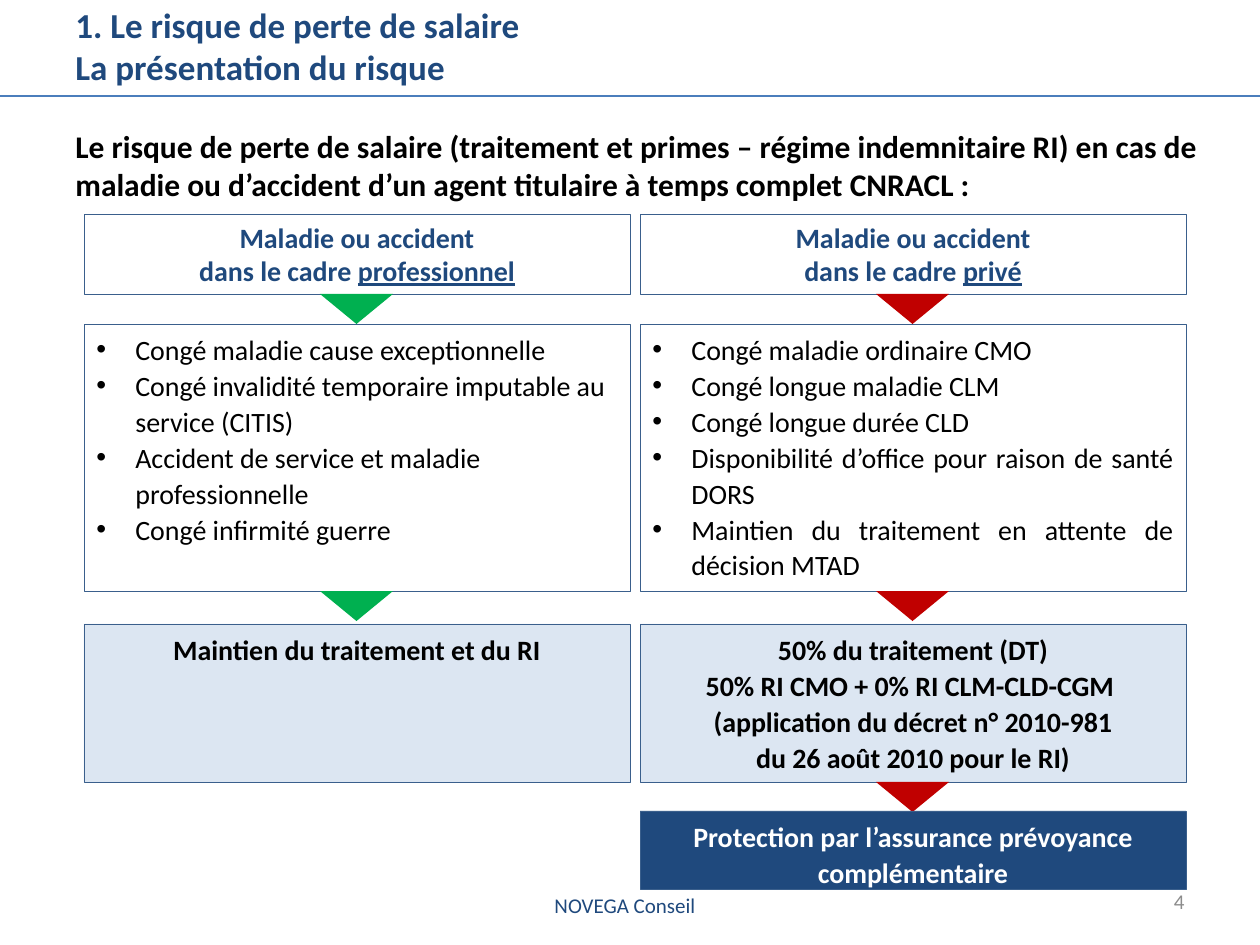
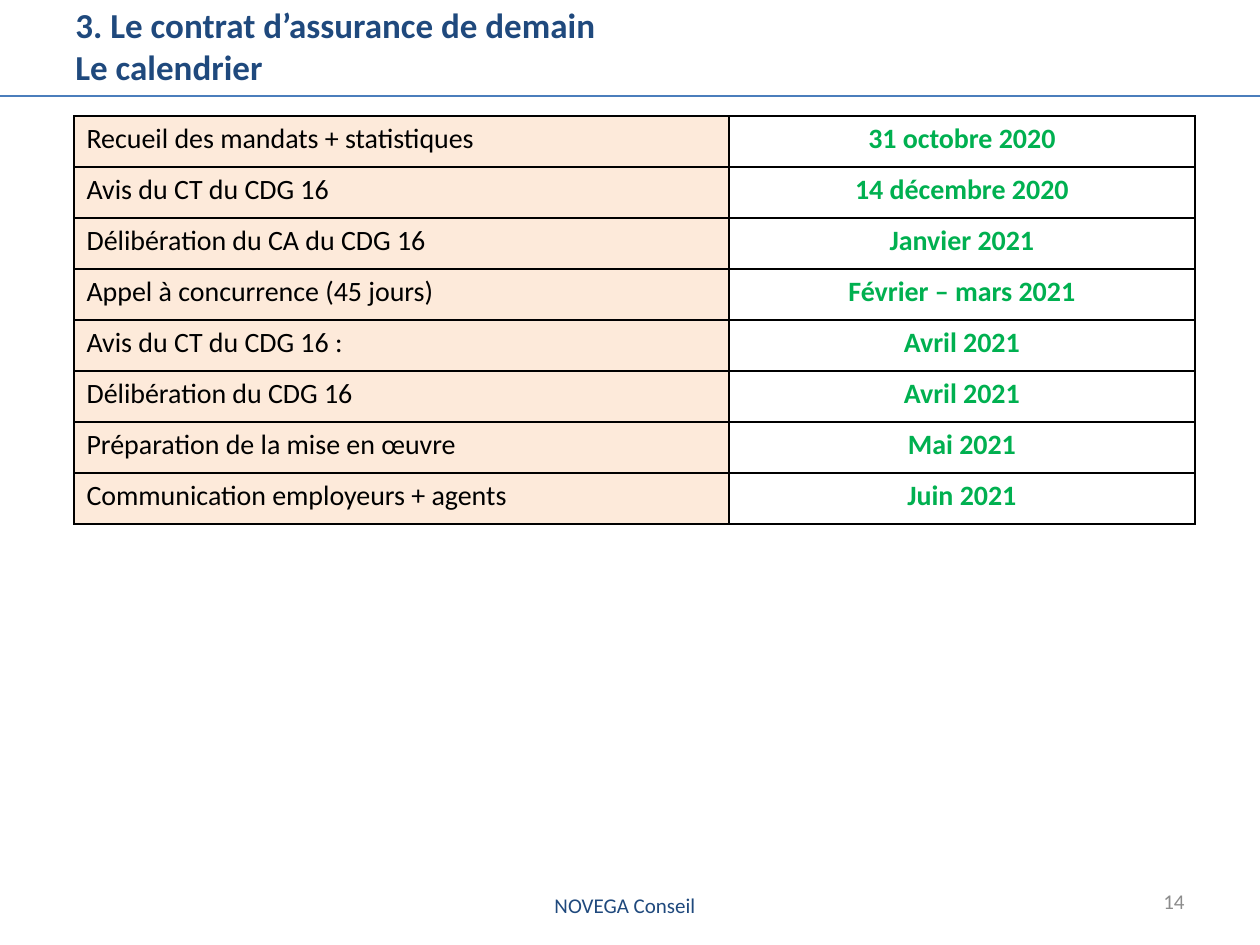
from lxml import etree
from pptx import Presentation
from pptx.dml.color import RGBColor
from pptx.enum.shapes import MSO_CONNECTOR, MSO_SHAPE
from pptx.enum.text import MSO_ANCHOR, PP_ALIGN
from pptx.oxml.ns import qn
from pptx.util import Emu, Pt

LEFT, CENTER, RIGHT, JUSTIFY = (
    PP_ALIGN.LEFT, PP_ALIGN.CENTER, PP_ALIGN.RIGHT, PP_ALIGN.JUSTIFY)
TOP, MIDDLE = MSO_ANCHOR.TOP, MSO_ANCHOR.MIDDLE
RECTANGLE, TRIANGLE = MSO_SHAPE.RECTANGLE, MSO_SHAPE.ISOSCELES_TRIANGLE
STRAIGHT = MSO_CONNECTOR.STRAIGHT

NAVY = RGBColor(0x1F, 0x49, 0x7D)
OUTLINE = RGBColor(0x3A, 0x5F, 0x8C)
RULE = RGBColor(0x4B, 0x7E, 0xBC)
PALE_BLUE = RGBColor(0xDC, 0xE6, 0xF2)
PEACH = RGBColor(0xFD, 0xEA, 0xDA)
GREEN = RGBColor(0x00, 0xB0, 0x50)
RED = RGBColor(0xC0, 0x00, 0x00)
GRAY = RGBColor(0x8C, 0x8C, 0x8C)
BLACK = RGBColor(0x00, 0x00, 0x00)
WHITE = RGBColor(0xFF, 0xFF, 0xFF)

FONT = "Calibri"
FOOTER = "NOVEGA Conseil"
PAGE_WIDTH, PAGE_HEIGHT = 1260, 945
EMU_PER_PX = 914400 / 126

COLUMN_WIDTH = 546
HEADER_ROW, LEAVE_ROW, PAY_ROW, COVER_ROW = (
    (214, 80), (324, 267), (624, 158), (811, 78))
ARROW_WIDTH, ARROW_HEIGHT = 73, 30

# column left, arrow colour, underlined setting, leave alignment, leaves, pay
RISK_COLUMNS = [
    (84, GREEN, "professionnel", LEFT,
     ["Congé maladie cause exceptionnelle",
      "Congé invalidité temporaire imputable au service (CITIS)",
      "Accident de service et maladie professionnelle",
      "Congé infirmité guerre"],
     ["Maintien du traitement et du RI"]),
    (640, RED, "privé", JUSTIFY,
     ["Congé maladie ordinaire CMO",
      "Congé longue maladie CLM",
      "Congé longue durée CLD",
      "Disponibilité d’office pour raison de santé DORS",
      "Maintien du traitement en attente de décision MTAD"],
     ["50% du traitement (DT)",
      "50% RI CMO + 0% RI CLM-CLD-CGM ",
      "(application du décret n° 2010-981",
      "du 26 août 2010 pour le RI)"]),
]

CALENDAR = [
    ("Recueil des mandats + statistiques", "31 octobre 2020"),
    ("Avis du CT du CDG 16", "14 décembre 2020"),
    ("Délibération du CA du CDG 16", "Janvier 2021"),
    ("Appel à concurrence (45 jours)", "Février – mars 2021"),
    ("Avis du CT du CDG 16 :", "Avril 2021"),
    ("Délibération du CDG 16", "Avril 2021"),
    ("Préparation de la mise en œuvre", "Mai 2021"),
    ("Communication employeurs + agents", "Juin 2021"),
]


def px(length):
    return Emu(round(length * EMU_PER_PX))


def add_bullet(para):
    properties = para._p.get_or_add_pPr()
    properties.set("marL", str(px(39)))
    properties.set("indent", str(px(-39)))
    etree.SubElement(properties, qn("a:buFont"), typeface="Arial")
    etree.SubElement(properties, qn("a:buChar"), char="•")


def add_borders(cell):
    properties = cell._tc.get_or_add_tcPr()
    for side in ("a:lnL", "a:lnR", "a:lnT", "a:lnB"):
        line = etree.SubElement(properties, qn(side), w=str(Pt(1)))
        fill = etree.SubElement(line, qn("a:solidFill"))
        etree.SubElement(fill, qn("a:srgbClr"), val=str(BLACK))


class Pages:
    """Holds the deck, its shared style and the current page."""

    def __init__(self):
        self.deck = Presentation()
        self.deck.slide_width = px(PAGE_WIDTH)
        self.deck.slide_height = px(PAGE_HEIGHT)
        self.page = None

    def start(self, title, number):
        """Add a page with its title, rule, footer and number."""
        self.page = self.deck.slides.add_slide(self.deck.slide_layouts[6])
        self.text(372, 880, 506, 50, [FOOTER], 12, NAVY, CENTER, MIDDLE)
        self.rule(96)
        self.text(63, 16, 1134, 58, [title], 20, NAVY, anchor=MIDDLE, bold=True)
        self.text(903, 876, 294, 50, [str(number)], 12, GRAY, RIGHT, MIDDLE)

    def fill_frame(self, frame, lines, size, color, align=LEFT, bold=False,
                   spacing=None, bullets=False, underlined=""):
        """Fill a text frame; underlined is a word ending the last line."""
        for index, line in enumerate(lines):
            para = frame.add_paragraph() if index else frame.paragraphs[0]
            para.text = line
            para.alignment = align
            if spacing:
                para.line_spacing = spacing
            if bullets:
                add_bullet(para)
            para.font.name = FONT
            para.font.size = Pt(size)
            para.font.bold = bold
            para.font.color.rgb = color
        if underlined:
            span = para.add_run()
            span.text = underlined
            span.font.underline = True

    def text(self, left, top, width, height, lines, size, color,
             align=LEFT, anchor=TOP, bold=False):
        box = self.page.shapes.add_textbox(
            px(left), px(top), px(width), px(height))
        box.text_frame.word_wrap = True
        box.text_frame.vertical_anchor = anchor
        self.fill_frame(box.text_frame, lines, size, color, align, bold)

    def rule(self, top):
        line = self.page.shapes.add_connector(
            STRAIGHT, 0, px(top), px(PAGE_WIDTH), px(top))
        line.line.color.rgb = RULE
        line.line.width = Pt(0.75)
        etree.SubElement(line._element.spPr, qn("a:effectLst"))

    def shape(self, kind, left, top, width, height, fill):
        shape = self.page.shapes.add_shape(
            kind, px(left), px(top), px(width), px(height))
        shape.shadow.inherit = False
        shape.fill.solid()
        shape.fill.fore_color.rgb = fill
        return shape

    def box(self, left, row, fill, lines, color=BLACK, **style):
        top, height = row
        box = self.shape(RECTANGLE, left, top, COLUMN_WIDTH, height, fill)
        box.line.color.rgb = OUTLINE
        box.line.width = Pt(0.25)
        box.text_frame.word_wrap = True
        box.text_frame.vertical_anchor = TOP
        self.fill_frame(box.text_frame, lines, 16, color, **style)

    def arrow_below(self, left, row, color):
        """Add a triangle pointing down from the middle of a box."""
        arrow = self.shape(
            TRIANGLE, left + (COLUMN_WIDTH - ARROW_WIDTH) // 2, sum(row),
            ARROW_WIDTH, ARROW_HEIGHT, color)
        arrow.rotation = 180
        arrow.line.fill.background()

    def table(self, left, top, widths, row_height, rows):
        table = self.page.shapes.add_table(
            len(rows), len(widths), px(left), px(top),
            px(sum(widths)), px(row_height * len(rows))).table
        table.first_row = False
        table.horz_banding = False
        for column, width in zip(table.columns, widths):
            column.width = px(width)
        for row, (step, date) in zip(table.rows, rows):
            row.height = px(row_height)
            step_cell, date_cell = row.cells
            for cell in (step_cell, date_cell):
                add_borders(cell)
                cell.fill.solid()
            step_cell.fill.fore_color.rgb = PEACH
            date_cell.fill.fore_color.rgb = WHITE
            self.fill_frame(step_cell.text_frame, [step], 16, BLACK)
            self.fill_frame(
                date_cell.text_frame, [date], 16, GREEN, CENTER, True)


def build_risk_page(pages):
    pages.start("1. Le risque de perte de salaire\vLa présentation du risque", 4)
    pages.text(63, 121, 1153, 728, [
        "Le risque de perte de salaire (traitement et primes – régime "
        "indemnitaire RI) en cas de maladie ou d’accident d’un agent "
        "titulaire à temps complet CNRACL :"], 18, BLACK, bold=True)
    for left, color, setting, align, leaves, pay in RISK_COLUMNS:
        pages.box(left, HEADER_ROW, WHITE,
                  ["Maladie ou accident", "dans le cadre "], NAVY,
                  align=CENTER, bold=True, underlined=setting)
        pages.box(left, LEAVE_ROW, WHITE, leaves,
                  align=align, spacing=1.07, bullets=True)
        pages.box(left, PAY_ROW, PALE_BLUE, pay,
                  align=CENTER, bold=True, spacing=1.07)
        for row in (HEADER_ROW, LEAVE_ROW):
            pages.arrow_below(left, row, color)
    private_left = RISK_COLUMNS[1][0]
    pages.arrow_below(private_left, PAY_ROW, RED)
    pages.box(private_left, COVER_ROW, NAVY,
              ["Protection par l’assurance prévoyance complémentaire"], WHITE,
              align=CENTER, bold=True, spacing=1.07)


def build_calendar_page(pages):
    pages.start("3. Le contrat d’assurance de demain\vLe calendrier", 14)
    pages.table(74, 116, (655, 466), 51, CALENDAR)


def main():
    pages = Pages()
    build_risk_page(pages)
    build_calendar_page(pages)
    pages.deck.save("out.pptx")


if __name__ == "__main__":
    main()
